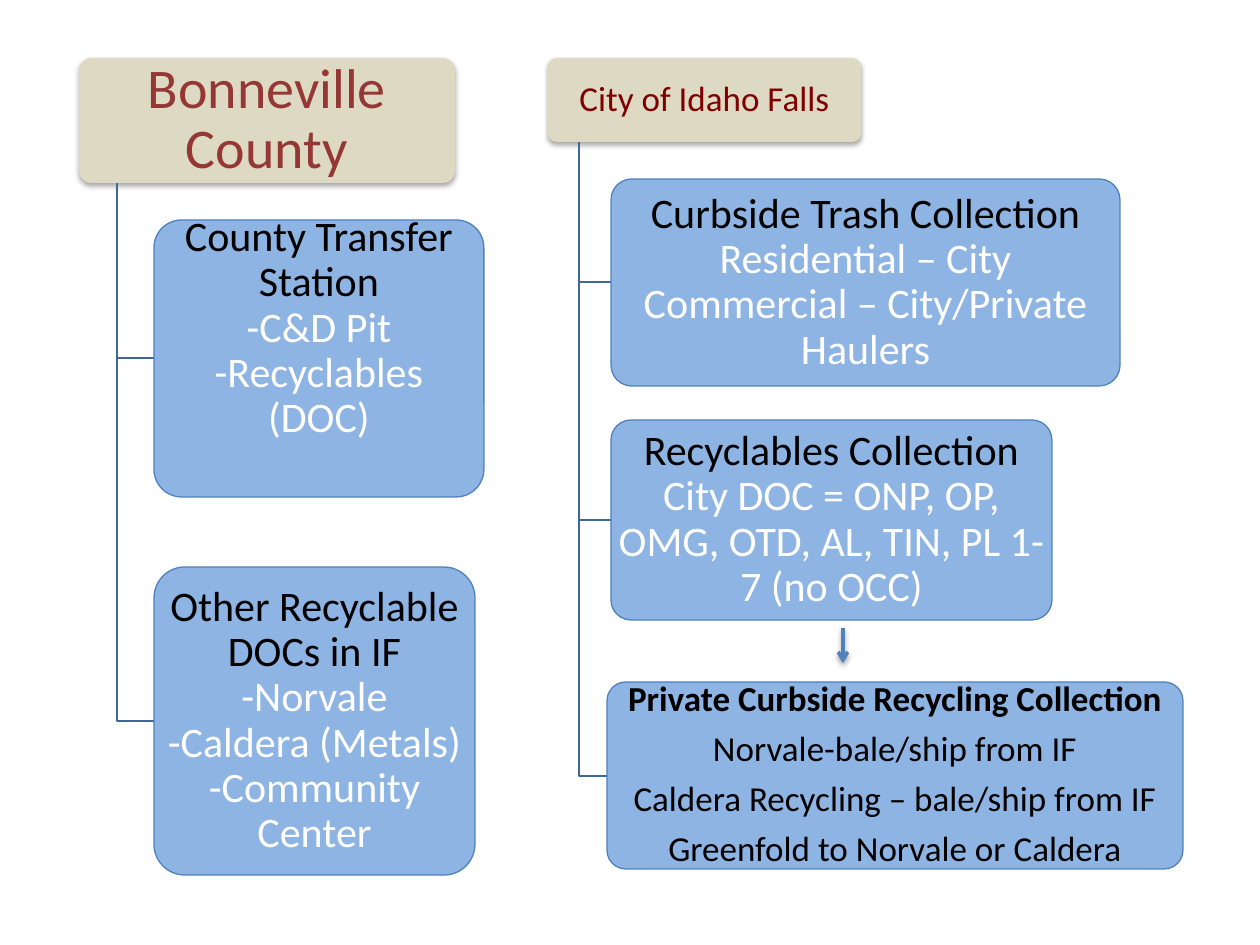
import pptx
import pptx.dml.color
import pptx.enum.shapes
import pptx.enum.text
import pptx.oxml
import pptx.oxml.ns
import pptx.util

RGBColor = pptx.dml.color.RGBColor
SHAPES = pptx.enum.shapes.MSO_SHAPE
SCALE = 914400 / 126  # EMU per px

SAND = RGBColor(0xDD, 0xD9, 0xC3)
SKY = RGBColor(0x8E, 0xB4, 0xE3)
BLUE = RGBColor(0x4F, 0x81, 0xBD)
BRANCH_BLUE = RGBColor(0x3F, 0x67, 0x97)
BRICK = RGBColor(0x95, 0x37, 0x35)
MAROON = RGBColor(0x80, 0x00, 0x00)
BLACK = RGBColor(0x00, 0x00, 0x00)
WHITE = RGBColor(0xFF, 0xFF, 0xFF)

FONT = "Calibri"
SPACE_AFTER = 0.35  # share of the text size


def px(length):
    return pptx.util.Emu(round(length * SCALE))


def add_shadow(shape, distance, opacity):
    """Give a shape or connector a soft shadow straight below it."""
    properties = shape._element.spPr
    effects = properties.find(pptx.oxml.ns.qn("a:effectLst"))
    if effects is None:
        effects = properties.makeelement(pptx.oxml.ns.qn("a:effectLst"), {})
        properties.append(effects)
    effects.append(pptx.oxml.parse_xml(
        f'<a:outerShdw {pptx.oxml.ns.nsdecls("a")} blurRad="40000" '
        f'dist="{distance}" dir="5400000" rotWithShape="0">'
        f'<a:srgbClr val="000000"><a:alpha val="{opacity}"/></a:srgbClr>'
        '</a:outerShdw>'))


def add_box(page, frame, fill):
    box = page.shapes.add_shape(SHAPES.ROUNDED_RECTANGLE, *map(px, frame))
    box.adjustments[0] = 0.1
    box.fill.solid()
    box.fill.fore_color.rgb = fill
    box.shadow.inherit = False
    return box


def write_lines(box, lines, size, colors, spaced, bold_first=False, lift=0):
    """Centre the lines in the box; the first line has its own colour."""
    text = box.text_frame
    text.word_wrap = True
    text.vertical_anchor = pptx.enum.text.MSO_ANCHOR.MIDDLE
    text.margin_left = text.margin_right = 0
    text.margin_top, text.margin_bottom = px(-lift), px(lift)
    text.text = "\n".join(lines)
    for index, para in enumerate(text.paragraphs):
        para.alignment = pptx.enum.text.PP_ALIGN.CENTER
        para.line_spacing = 0.9
        para.space_before = pptx.util.Pt(0)
        para.space_after = pptx.util.Pt(size * SPACE_AFTER if spaced else 0)
        for span in para.runs:
            span.font.name = FONT
            span.font.size = pptx.util.Pt(size)
            span.font.bold = bold_first and index == 0
            span.font.color.rgb = colors[min(index, 1)]


def add_header(page, frame, title, size, color):
    box = add_box(page, frame, SAND)
    box.line.fill.background()
    add_shadow(box, 23000, 35000)
    write_lines(box, [title], size, (color, color), spaced=True)


def add_branch(page, header, child):
    """Run from a tenth along the header's bottom to the child's left side."""
    left, top, width, height = header
    trunk = left + round(width / 10)
    middle = child[1] + child[3] / 2
    outline = page.shapes.build_freeform(trunk, top + height, scale=SCALE)
    outline.add_line_segments([(trunk, middle), (child[0], middle)], close=False)
    branch = outline.convert_to_shape()
    branch.fill.background()
    branch.line.color.rgb = BRANCH_BLUE
    branch.line.width = pptx.util.Pt(0.75)
    branch.shadow.inherit = False


def add_child(page, header, frame, lines, size=24, colors=(BLACK, WHITE), **style):
    add_branch(page, header, frame)
    box = add_box(page, frame, SKY)
    box.line.color.rgb = BLUE
    box.line.width = pptx.util.Pt(0.75)
    write_lines(box, lines, size, colors, **{"spaced": False, **style})


def add_arrow(page, x, top, bottom):
    arrow = page.shapes.add_connector(
        pptx.enum.shapes.MSO_CONNECTOR.STRAIGHT, px(x), px(top), px(x), px(bottom))
    arrow.line.color.rgb = BLUE
    arrow.line.width = pptx.util.Pt(2)
    arrow.line._get_or_add_ln().append(pptx.oxml.parse_xml(
        f'<a:tailEnd {pptx.oxml.ns.nsdecls("a")} type="arrow"/>'))
    add_shadow(arrow, 20000, 38000)


def main():
    deck = pptx.Presentation()
    deck.slide_width, deck.slide_height = px(1260), px(945)
    page = deck.slides.add_slide(deck.slide_layouts[6])

    # County tree
    county = (79, 58, 376, 125)
    add_header(page, county, "Bonneville County", 32, BRICK)
    add_child(page, county, (154, 220, 330, 277),
              ["County Transfer Station", "-C&D Pit", "-Recyclables (DOC)"], lift=30)
    add_child(page, county, (154, 567, 321, 308),
              ["Other Recyclable DOCs in IF", "-Norvale", "-Caldera (Metals)",
               "-Community Center"])

    # City tree
    city = (548, 58, 313, 84)
    add_header(page, city, "City of Idaho Falls", 20, MAROON)
    add_child(page, city, (611, 179, 509, 207),
              ["Curbside Trash Collection", "Residential – City",
               "Commercial – City/Private Haulers"])
    add_child(page, city, (611, 420, 441, 200),
              ["Recyclables Collection",
               "City DOC = ONP, OP, OMG, OTD, AL, TIN, PL 1-7 (no OCC)"])
    add_child(page, city, (607, 682, 576, 187),
              ["Private Curbside Recycling Collection", "Norvale-bale/ship from IF",
               "Caldera Recycling – bale/ship from IF", "Greenfold to Norvale or Caldera"],
              size=20, colors=(BLACK, BLACK), spaced=True, bold_first=True)

    # Flow from city collection to private collection
    add_arrow(page, 843, 628, 663)

    deck.save("out.pptx")


if __name__ == "__main__":
    main()
